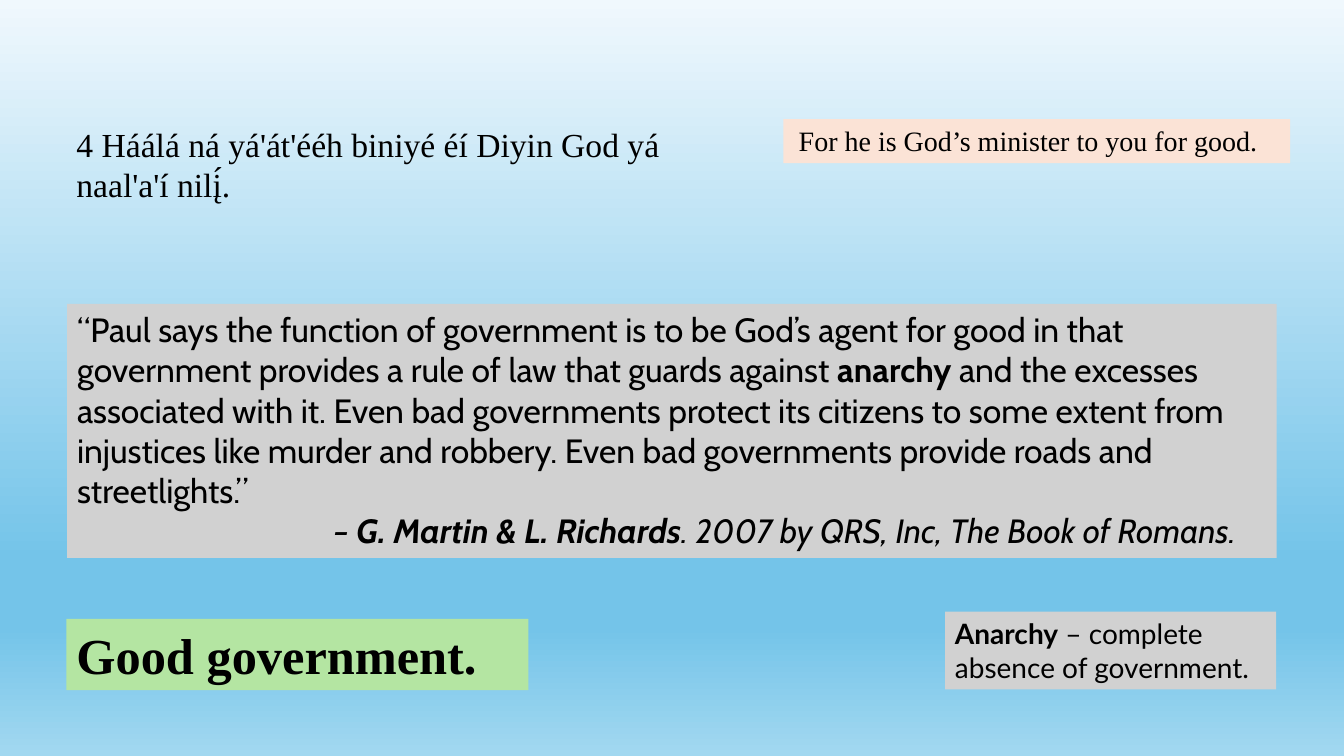
from lxml.etree import SubElement
from pptx import Presentation
from pptx.dml.color import RGBColor
from pptx.enum.shapes import MSO_SHAPE
from pptx.enum.text import MSO_ANCHOR, PP_ALIGN
from pptx.oxml.ns import qn
from pptx.util import Pt

COLORS = {
    "text": "000000",
    "peach": "FBE3D6",
    "green": "B4E5A2",
    "gray": "D1D1D1",
    "sky_top": "F0F8FD",
    "sky_deep": "74C4E9",
    "sky_bottom": "A2D8F0",
}
SKY_STOPS = [(0, "sky_top"), (74, "sky_deep"), (83, "sky_deep"), (100, "sky_bottom")]
SERIF, SANS, NOTE = "Times New Roman", "Cabin", "Lato"


def paint_sky(page):
    """Vertical gradient behind the whole slide."""
    fill = page.background.fill
    fill.gradient()
    fill.gradient_angle = 270
    stops = page.element.find(".//" + qn("a:gsLst"))
    for stop in list(stops):
        stops.remove(stop)
    for percent, color in SKY_STOPS:
        stop = SubElement(stops, qn("a:gs"), pos=str(percent * 1000))
        SubElement(stop, qn("a:srgbClr"), val=COLORS[color])


def add_panel(page, box, color=None, inset=7.2):
    """Text area in the given box, filled when a color is named."""
    lengths = [Pt(length) for length in box]
    if color:
        panel = page.shapes.add_shape(MSO_SHAPE.RECTANGLE, *lengths)
        panel.shadow.inherit = False
        panel.fill.solid()
        panel.fill.fore_color.rgb = RGBColor.from_string(COLORS[color])
        panel.line.fill.background()
    else:
        panel = page.shapes.add_textbox(*lengths)
    frame = panel.text_frame
    frame.word_wrap = True
    frame.vertical_anchor = MSO_ANCHOR.TOP
    frame.margin_left = Pt(inset)
    return frame


def write(para, spans, font, size, bold=None, italic=None):
    """Fill a paragraph; spans are (text, is_bold) pairs."""
    para.alignment = PP_ALIGN.LEFT
    para.font.name = font
    para.font.size = Pt(size)
    para.font.bold = bold
    para.font.italic = italic
    para.font.color.rgb = RGBColor.from_string(COLORS["text"])
    for text, is_bold in spans:
        span = para.add_run()
        span.text = text
        if is_bold:
            span.font.bold = True


def add_verse(page, navajo_box, english_box):
    navajo = add_panel(page, navajo_box)
    write(navajo.paragraphs[0],
          [("4 Háálá ná yá'át'ééh biniyé éí Diyin God yá naal'a'í nilį́.", False)],
          SERIF, 24)
    english = add_panel(page, english_box, "peach", inset=11)
    write(english.paragraphs[0],
          [("For he is God’s minister to you for good.", False)], SERIF, 20)


def add_heading(page, box):
    frame = add_panel(page, box, "green")
    write(frame.paragraphs[0], [("Good government.", False)], SERIF, 36, bold=True)


def add_quote(page, box):
    frame = add_panel(page, box, "gray")
    write(frame.paragraphs[0], [
        ("“Paul says the function of government is to be God’s agent for good in that "
         "government provides a rule of law that guards against ", False),
        ("anarchy", True),
        (" and the excesses associated with it. Even bad governments protect its "
         "citizens to some extent from injustices like murder and robbery. Even bad "
         "governments provide roads and streetlights.”", False),
    ], SANS, 24)
    # Citation, indented under the quote
    citation = frame.add_paragraph()
    write(citation, [
        ("– ", False),
        ("G. Martin & L. Richards", True),
        (". 2007 by QRS, Inc, The Book of Romans.", False),
    ], SANS, 24, italic=True)
    citation._p.get_or_add_pPr().set("marL", str(Pt(183)))


def add_definition(page, box):
    frame = add_panel(page, box, "gray")
    write(frame.paragraphs[0],
          [("Anarchy", True), (" – complete absence of government.", False)], NOTE, 20)


def main():
    deck = Presentation()
    deck.slide_width, deck.slide_height = Pt(960), Pt(540)
    page = deck.slides.add_slide(deck.slide_layouts[6])
    paint_sky(page)
    # Boxes are left, top, width, height
    add_verse(page, (47.5, 85, 480, 65.5), (559.5, 85, 362, 31.5))
    add_heading(page, (47.5, 442, 330, 51))
    add_quote(page, (48, 217, 864, 181.5))
    add_definition(page, (675, 437, 236.5, 55.5))
    deck.save("out.pptx")


if __name__ == "__main__":
    main()
